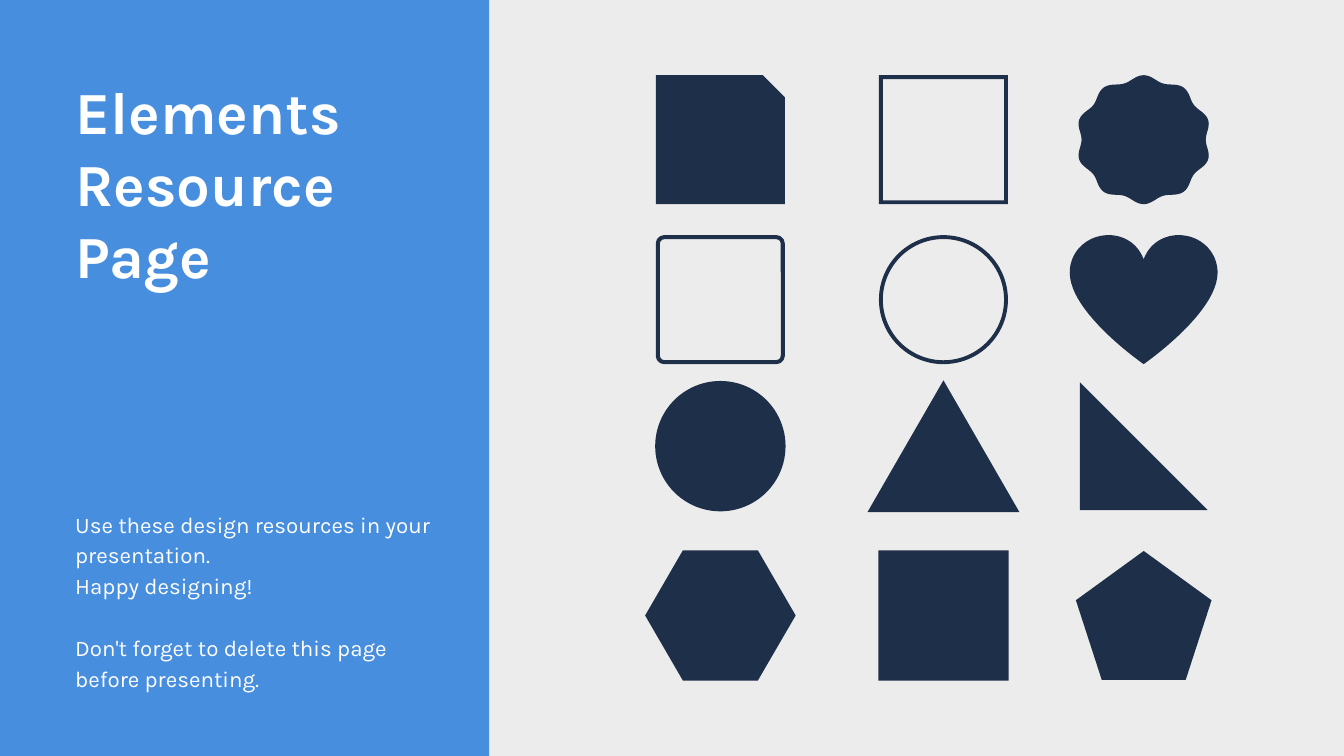
from math import cos, pi, sin

from pptx import Presentation
from pptx.dml.color import RGBColor
from pptx.enum.shapes import MSO_SHAPE
from pptx.util import Inches, Pt

NAVY, BLUE, GREY, WHITE = "1E2F49", "488EDF", "EDECED", "FFFFFF"
WIDE, HIGH = 10, 10 * 9 / 16
COLS = (5.36, 7.02, 8.51)
ROWS = (1.04, 2.23, 3.32, 4.58)
SIDE, EDGE = 0.96, 0.03

ICONS = (
    (0, 0, MSO_SHAPE.SNIP_1_RECTANGLE, SIDE, SIDE, 0.17),
    (1, 0, MSO_SHAPE.FRAME, SIDE, SIDE, EDGE),
    (1, 1, MSO_SHAPE.DONUT, SIDE, SIDE, EDGE),
    (0, 2, MSO_SHAPE.OVAL, 0.97, 0.97, None),
    (1, 2, MSO_SHAPE.ISOSCELES_TRIANGLE, 1.13, 0.98, None),
    (2, 2, MSO_SHAPE.RIGHT_TRIANGLE, 0.95, 0.95, None),
    (0, 3, MSO_SHAPE.HEXAGON, 1.12, 0.97, 0.29),
    (1, 3, MSO_SHAPE.RECTANGLE, 0.97, 0.97, None),
    (2, 3, MSO_SHAPE.REGULAR_PENTAGON, 1.01, 0.96, None),
)
HEART = (
    ((0, -0.3), (0.04, -0.41), (0.14, -0.48), (0.26, -0.48)),
    ((0.26, -0.48), (0.42, -0.48), (0.55, -0.36), (0.55, -0.2)),
    ((0.55, -0.2), (0.55, 0.1), (0, 0.48), (0, 0.48)),
)


def tint(code):
    """Turn a hex string into a colour."""
    return RGBColor.from_string(code)


def paint(shape, code):
    """Give a shape a flat fill without line or shadow."""
    shape.shadow.inherit = False
    shape.fill.solid()
    shape.fill.fore_color.rgb = tint(code)
    shape.line.fill.background()


def place(slide, kind, mid, size, adj=None):
    """Add a preset shape around its centre."""
    (x, y), (w, h) = mid, size
    shape = slide.shapes.add_shape(
        kind, Inches(x - w / 2), Inches(y - h / 2), Inches(w), Inches(h))
    if adj is not None:
        shape.adjustments[0] = adj
    return shape


def frame(slide, mid):
    """Add a rounded square outline with no fill."""
    size = (SIDE - EDGE, SIDE - EDGE)
    shape = place(slide, MSO_SHAPE.ROUNDED_RECTANGLE, mid, size, 0.05)
    shape.shadow.inherit = False
    shape.fill.background()
    shape.line.color.rgb = tint(NAVY)
    shape.line.width = Inches(EDGE)


def trace(slide, mid, dots):
    """Add a filled outline from offsets around a centre."""
    spots = [(Inches(mid[0] + x), Inches(mid[1] + y)) for x, y in dots]
    pen = slide.shapes.build_freeform(*spots[0])
    pen.add_line_segments(spots[1:], close=True)
    paint(pen.convert_to_shape(), NAVY)


def curve(knots, steps=24):
    """Return points along a cubic curve."""
    dots = []
    for i in range(steps):
        t = i / steps
        mix = ((1 - t) ** 3, 3 * t * (1 - t) ** 2, 3 * t * t * (1 - t), t ** 3)
        dots.append(tuple(sum(m * k[a] for m, k in zip(mix, knots))
                          for a in (0, 1)))
    return dots


def heart(slide, mid):
    """Draw a heart from one half and its mirror."""
    half = [dot for knots in HEART for dot in curve(knots)] + [(0, 0.48)]
    trace(slide, mid, half + [(-x, y) for x, y in half[-2:0:-1]])


def badge(slide, mid, waves=10, steps=200):
    """Draw a round badge with a wavy rim."""
    dots = []
    for i in range(steps):
        turn = 2 * pi * i / steps
        far = 0.46 + 0.02 * cos(waves * turn)
        dots.append((1.05 * far * sin(turn), -far * cos(turn)))
    trace(slide, mid, dots)


def write(slide, top, high, lines, size, bold=False, pitch=None):
    """Add a text box and return its paragraphs."""
    box = slide.shapes.add_textbox(
        Inches(0.56), Inches(top), Inches(2.7), Inches(high)).text_frame
    box.word_wrap = True
    box.margin_left = box.margin_right = box.margin_top = box.margin_bottom = 0
    box.text = "\n".join(lines)
    for para in box.paragraphs:
        font = para.font
        font.name, font.size, font.bold = "Karla", Pt(size), bold
        font.color.rgb = tint(WHITE)
        if pitch:
            para.line_spacing = pitch
    return box.paragraphs


def main():
    """Build the slide and save it."""
    deck = Presentation()
    deck.slide_width, deck.slide_height = Inches(WIDE), Inches(HIGH)
    slide = deck.slides.add_slide(deck.slide_layouts[6])
    slide.background.fill.solid()
    slide.background.fill.fore_color.rgb = tint(GREY)

    panel = place(slide, MSO_SHAPE.RECTANGLE, (1.82, HIGH / 2), (3.64, HIGH))
    paint(panel, BLUE)
    notes = write(slide, 3.77, 1.36, (
        "Use these design resources in your presentation.",
        "Happy designing!",
        "Don't forget to delete this page before presenting.",
    ), 12, pitch=1.15)
    notes[-1].space_before = Pt(16.6)
    write(slide, 0.56, 1.62, ("Elements", "Resource", "Page"), 32, bold=True)

    for col, row, kind, w, h, adj in ICONS:
        paint(place(slide, kind, (COLS[col], ROWS[row]), (w, h), adj), NAVY)
    frame(slide, (COLS[0], ROWS[1]))
    badge(slide, (COLS[2], ROWS[0]))
    heart(slide, (COLS[2], ROWS[1]))

    deck.save("out.pptx")


if __name__ == "__main__":
    main()
